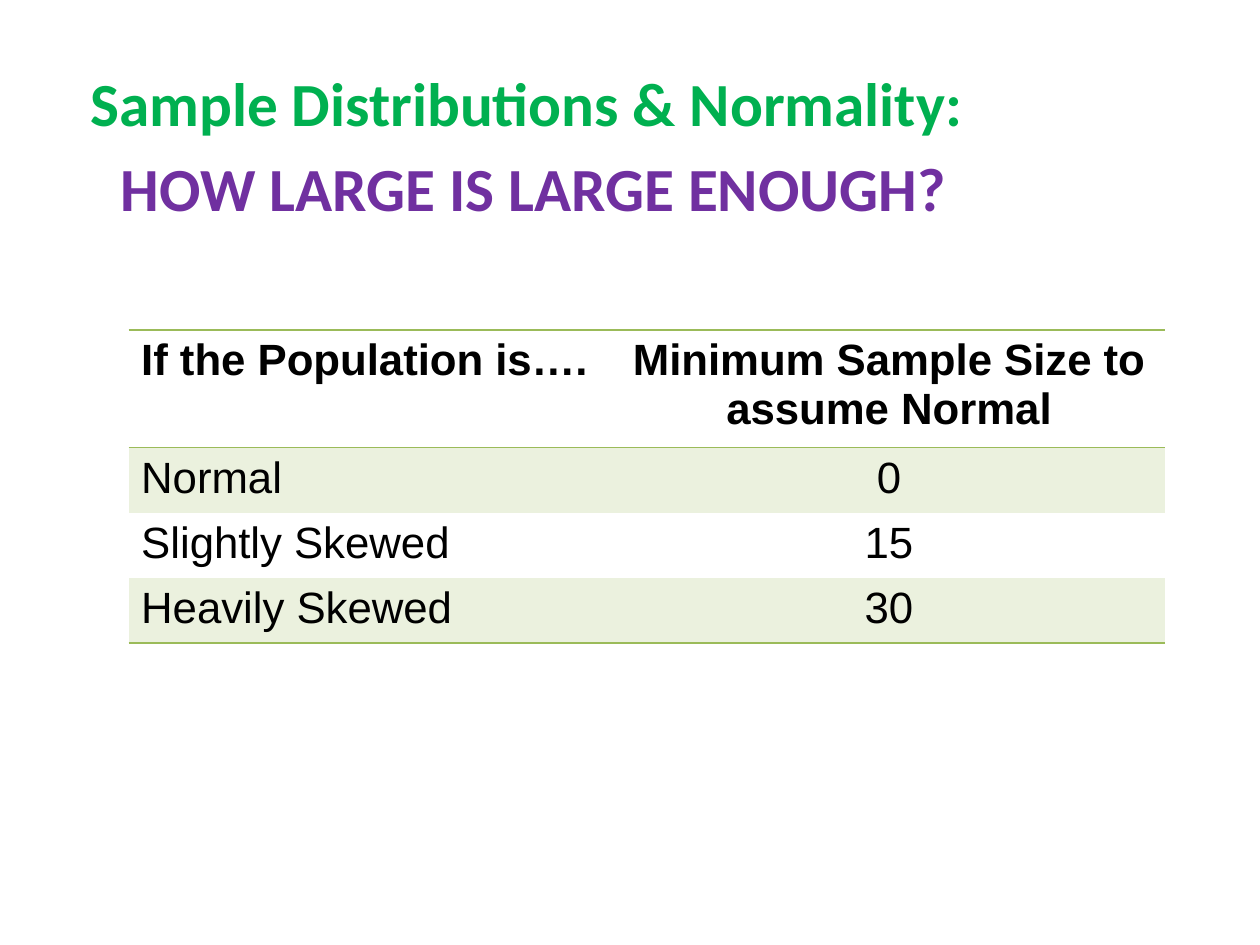
import pptx
import pptx.dml.color
import pptx.enum.text
import pptx.util
from lxml import etree
from pptx.oxml.ns import qn

Pt = pptx.util.Pt
CENTER = pptx.enum.text.PP_ALIGN.CENTER
LEFT = pptx.enum.text.PP_ALIGN.LEFT

TITLE = [
    ("Sample Distributions & Normality: ", "00B050"),
    ("HOW LARGE IS LARGE ENOUGH?", "7030A0"),
]
ROWS = [
    ("If the Population is….", "Minimum Sample Size to assume Normal"),
    ("Normal", "0"),
    ("Slightly Skewed", "15"),
    ("Heavily Skewed", "30"),
]
COL_WIDTHS = (276.5, 316)
HEADER_HEIGHT, ROW_HEIGHT = 67, 37.2
GREEN, BAND = "9BBB59", "EBF1DE"
NO_STYLE = "{2D5ABB26-0587-4C30-8999-92F81FD0307C}"


def rgb(color):
    return pptx.dml.color.RGBColor.from_string(color)


def add_text(p, text, font, size, color, bold, align):
    p.alignment = align
    r = p.add_run()
    r.text = text
    r.font.name = font
    r.font.size = Pt(size)
    r.font.bold = bold
    r.font.color.rgb = rgb(color)


def add_border(cell, side):
    """Draw a green line on one side of a cell; call before filling it."""
    tc_pr = cell._tc.get_or_add_tcPr()
    ln = etree.SubElement(tc_pr, qn("a:" + side), w=str(Pt(1)))
    fill = etree.SubElement(ln, qn("a:solidFill"))
    etree.SubElement(fill, qn("a:srgbClr"), val=GREEN)


def add_title(s):
    tf = s.shapes.add_textbox(Pt(45), Pt(37.5), Pt(520), Pt(100)).text_frame
    tf.word_wrap = True
    tf.margin_left = tf.margin_right = tf.margin_top = tf.margin_bottom = 0
    for i, (text, color) in enumerate(TITLE):
        p = tf.add_paragraph() if i else tf.paragraphs[0]
        if i:
            p.space_before = Pt(6.5)
        add_text(p, text, "Calibri", 35, color, True, CENTER)


def add_sample_table(s):
    heights = [HEADER_HEIGHT] + [ROW_HEIGHT] * (len(ROWS) - 1)
    sp = s.shapes.add_table(len(ROWS), len(COL_WIDTHS), Pt(73.5), Pt(188.5),
                            Pt(sum(COL_WIDTHS)), Pt(sum(heights)))
    table = sp.table
    table.first_row = table.horz_banding = False
    table._tbl.tblPr.find(qn("a:tableStyleId")).text = NO_STYLE
    for column, width in zip(table.columns, COL_WIDTHS):
        column.width = Pt(width)
    for i, (row, height) in enumerate(zip(ROWS, heights)):
        table.rows[i].height = Pt(height)
        for j, text in enumerate(row):
            cell = table.cell(i, j)
            if i == 0:
                add_border(cell, "lnT")
            if i in (0, len(ROWS) - 1):
                add_border(cell, "lnB")
            if i % 2:
                cell.fill.solid()
                cell.fill.fore_color.rgb = rgb(BAND)
            else:
                cell.fill.background()
            add_text(cell.text_frame.paragraphs[0], text, "Arial", 25,
                     "000000", i == 0, CENTER if j else LEFT)


def main():
    prs = pptx.Presentation()
    prs.slide_width, prs.slide_height = Pt(720), Pt(540)
    s = prs.slides.add_slide(prs.slide_layouts[6])
    add_title(s)
    add_sample_table(s)
    prs.save("out.pptx")


if __name__ == "__main__":
    main()
